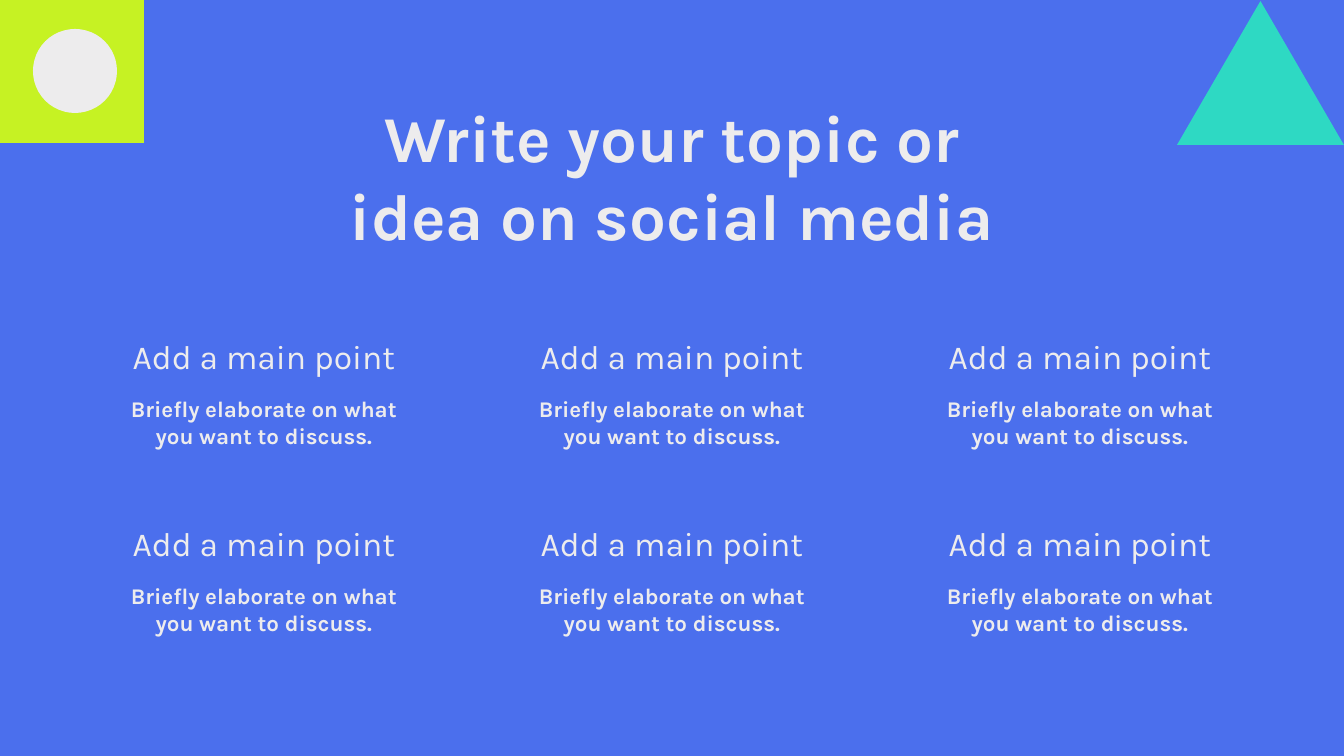
import pptx
import pptx.dml.color
import pptx.enum.shapes
import pptx.enum.text
import pptx.util

PX = 914400 / 134.4
WIDTH, HEIGHT = 1344, 756
BLUE, LIGHT, LIME, TEAL = "4B6FED", "EDECED", "C6F223", "2ED9C3"

TITLE = "Write your topic or idea on social media"
POINTS = [("Add a main point", "Briefly elaborate on what you want to discuss.")] * 6

KIND = pptx.enum.shapes.MSO_SHAPE
DECORATIONS = [
    (KIND.RECTANGLE, (0, -1, 144, 144), LIME),
    (KIND.OVAL, (33, 29, 84, 84), LIGHT),
    (KIND.ISOSCELES_TRIANGLE, (1177, 1, 167, 144), TEAL),
]

TITLE_BOX = (344, 97, 656, 159)
COLUMNS, COLUMN_STEP, ROW_STEP = 3, 408, 187
GRID_LEFT, GRID_TOP, POINT_WIDTH = 117, 336, 294
HEADING_HEIGHT, DETAIL_OFFSET, DETAIL_HEIGHT = 40, 59, 54

TITLE_FONT = {"name": "Karla", "size": pptx.util.Pt(35), "bold": True}
HEADING_FONT = {"name": "Karla", "size": pptx.util.Pt(18), "bold": False}
DETAIL_FONT = {"name": "Karla", "size": pptx.util.Pt(12), "bold": True}


def emu(box):
    return [round(v * PX) for v in box]


def paint(fill, color):
    fill.solid()
    fill.fore_color.rgb = pptx.dml.color.RGBColor.from_string(color)


def add_text(shapes, text, box, font):
    tf = shapes.add_textbox(*emu(box)).text_frame
    frame = {"word_wrap": True, "margin_left": 0, "margin_top": 0,
             "margin_right": 0, "margin_bottom": 0,
             "auto_size": pptx.enum.text.MSO_AUTO_SIZE.SHAPE_TO_FIT_TEXT}
    for key, value in frame.items():
        setattr(tf, key, value)
    p = tf.paragraphs[0]
    p.alignment = pptx.enum.text.PP_ALIGN.CENTER
    r = p.add_run()
    r.text = text
    for key, value in font.items():
        setattr(r.font, key, value)
    paint(r.font.fill, LIGHT)


def add_decoration(shapes, kind, box, color):
    sp = shapes.add_shape(kind, *emu(box))
    sp.shadow.inherit = False
    sp.line.fill.background()
    paint(sp.fill, color)


def add_point(shapes, index, heading, detail):
    row, column = divmod(index, COLUMNS)
    x = GRID_LEFT + column * COLUMN_STEP
    y = GRID_TOP + row * ROW_STEP
    group = shapes.add_group_shape().shapes
    add_text(group, detail, (x, y + DETAIL_OFFSET, POINT_WIDTH, DETAIL_HEIGHT), DETAIL_FONT)
    add_text(group, heading, (x, y, POINT_WIDTH, HEADING_HEIGHT), HEADING_FONT)


def main():
    prs = pptx.Presentation()
    prs.slide_width, prs.slide_height = emu((WIDTH, HEIGHT))
    s = prs.slides.add_slide(prs.slide_layouts[6])
    paint(s.background.fill, BLUE)

    add_text(s.shapes, TITLE, TITLE_BOX, TITLE_FONT)
    for decoration in DECORATIONS:
        add_decoration(s.shapes, *decoration)
    for index, point in enumerate(POINTS):
        add_point(s.shapes, index, *point)

    prs.save("out.pptx")


if __name__ == "__main__":
    main()
